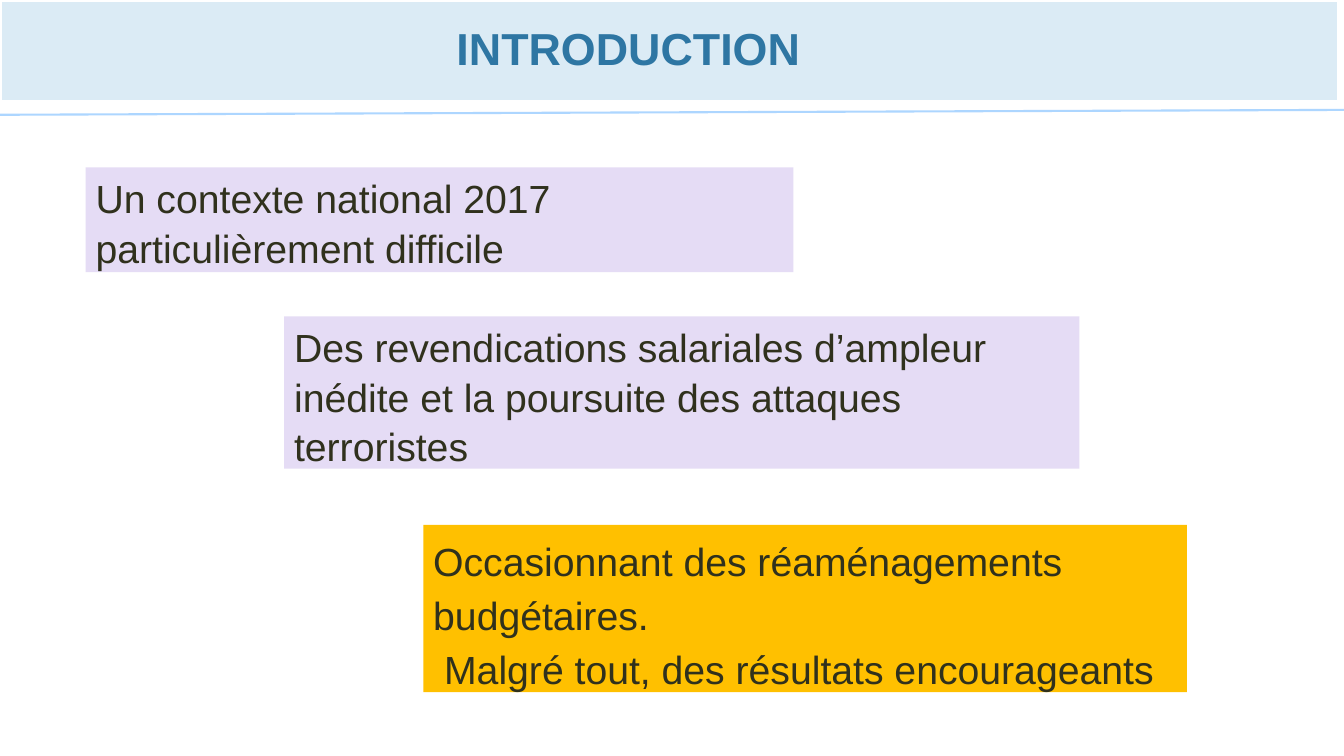
from dataclasses import dataclass

from lxml import etree
from pptx import Presentation
from pptx import util as u
from pptx.dml.color import RGBColor
from pptx.enum import shapes, text
from pptx.oxml.ns import qn


@dataclass(frozen=True)
class Theme:
    font: str = "Arial"
    head: int = 32
    body: int = 28
    blue: str = "2E76A3"
    band: str = "DBEBF5"
    rule: str = "ADD6FF"
    edge: str = "FFFFFF"
    ink: str = "30311D"
    lilac: str = "E5DCF5"
    gold: str = "FFC000"


class Deck:
    def __init__(self, theme):
        self.theme = theme
        self.show = Presentation()
        self.show.slide_width = u.Pt(960)
        self.show.slide_height = u.Pt(540)
        self.slide = self.show.slides.add_slide(self.show.slide_layouts[5])

    def style(self, para, size, color, bold=False):
        para.font.name = self.theme.font
        para.font.size = u.Pt(size)
        para.font.bold = bold
        para.font.color.rgb = RGBColor.from_string(color)

    def band(self, width, height):
        bar = self.slide.shapes.add_shape(
            shapes.MSO_SHAPE.RECTANGLE, 0, 0, u.Pt(width), u.Pt(height))
        bar.shadow.inherit = False
        bar.fill.solid()
        bar.fill.fore_color.rgb = RGBColor.from_string(self.theme.band)
        bar.line.color.rgb = RGBColor.from_string(self.theme.edge)
        bar.line.width = u.Pt(2.25)

    def rule(self, left, right):
        line = self.slide.shapes.add_connector(
            shapes.MSO_CONNECTOR.STRAIGHT, 0, u.Pt(left), u.Pt(960), u.Pt(right))
        line.line.color.rgb = RGBColor.from_string(self.theme.rule)
        line.line.width = u.Pt(1.5)
        etree.SubElement(line.element.spPr, qn("a:effectLst"))

    def title(self, words, left, top, width, height):
        head = self.slide.shapes.title
        head.left, head.top, head.width, head.height = map(
            u.Pt, (left, top, width, height))
        self.slide.shapes.element.append(head.element)
        frame = head.text_frame
        frame.text = words
        frame.vertical_anchor = text.MSO_ANCHOR.MIDDLE
        para = frame.paragraphs[0]
        para.alignment = text.PP_ALIGN.CENTER
        self.style(para, self.theme.head, self.theme.blue, True)

    def box(self, lines, left, top, width, height, fill, gap, indent=0):
        card = self.slide.shapes.add_textbox(
            *map(u.Pt, (left, top, width, height)))
        card.fill.solid()
        card.fill.fore_color.rgb = RGBColor.from_string(fill)
        frame = card.text_frame
        frame.word_wrap = True
        frame.text = "\n".join(lines)
        for para in frame.paragraphs:
            para.line_spacing = gap
            self.style(para, self.theme.body, self.theme.ink)
        if indent:
            frame.paragraphs[-1].element.get_or_add_pPr().set(
                "marL", str(u.Pt(indent))) if hasattr(
                frame.paragraphs[-1], "element") else frame.paragraphs[
                -1]._p.get_or_add_pPr().set("marL", str(u.Pt(indent)))


def main():
    theme = Theme()
    deck = Deck(theme)
    deck.band(956, 72.7)
    deck.rule(82, 78.5)
    deck.title("INTRODUCTION", 86.4, -13, 725, 94.3)
    deck.box(["Un contexte national 2017 particulièrement difficile"],
             61.2, 119.5, 505.5, 75, theme.lilac, 1.05)
    deck.box(["Des revendications salariales d’ampleur inédite "
              "et la poursuite des attaques terroristes"],
             203, 226, 568, 108.7, theme.lilac, 1.05)
    deck.box(["Occasionnant des réaménagements budgétaires.",
              "Malgré tout, des résultats encourageants"],
             302.4, 375, 545.5, 119.5, theme.gold, 1.15, 7.8)
    deck.show.save("out.pptx")


if __name__ == "__main__":
    main()
